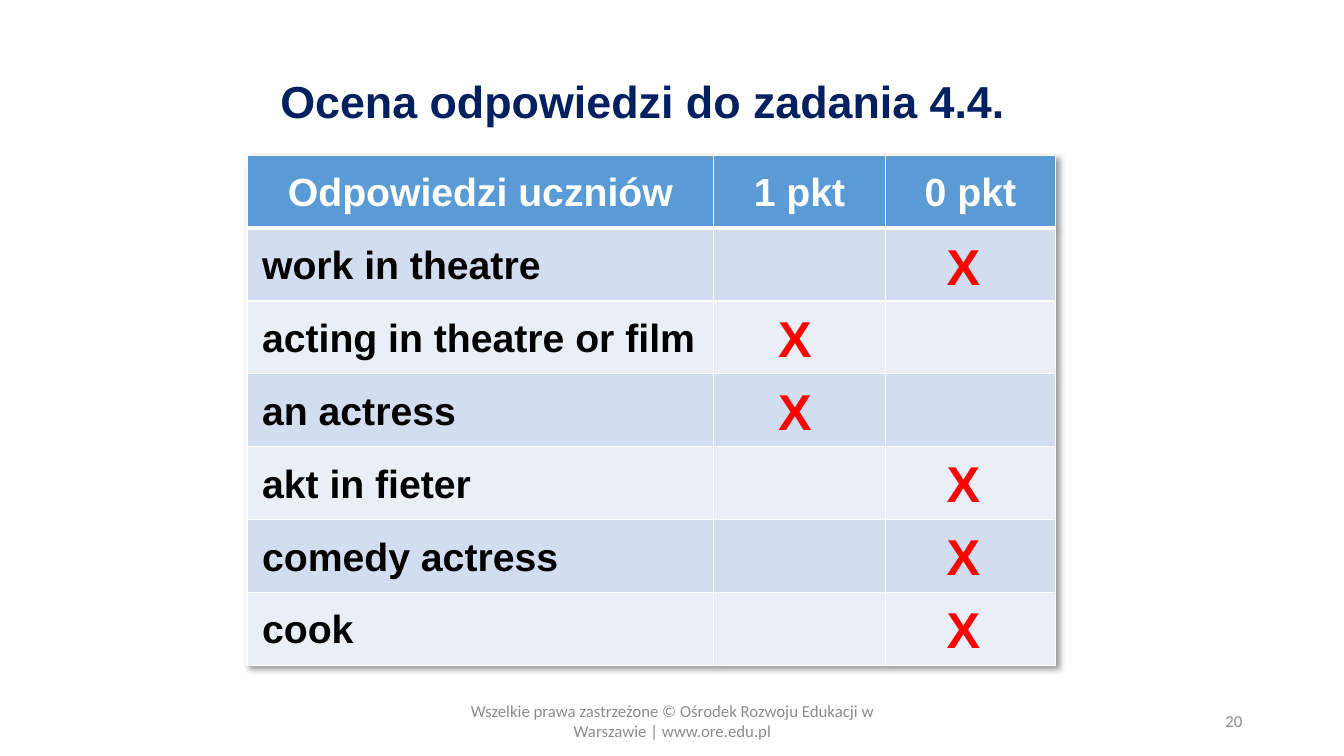
from lxml import etree
from pptx import Presentation
from pptx.dml.color import RGBColor
from pptx.enum.text import MSO_ANCHOR as Anchor, MSO_AUTO_SIZE as Fit, PP_ALIGN as Align
from pptx.oxml import parse_xml
from pptx.oxml.ns import nsdecls
from pptx.util import Inches, Pt


def style(par, size, color, bold=True, face="Arial", align=Align.LEFT):
    par.alignment = align
    for run in par.runs:
        font = run.font
        font.size, font.bold, font.name = Pt(size), bold, face
        font.color.rgb = RGBColor.from_string(color)


def add_box(left, top, width, height, text):
    """Add a wrapping text box and return its text frame."""
    box = slide.shapes.add_textbox(*map(Inches, (left, top, width, height)))
    frame = box.text_frame
    frame.word_wrap = True
    frame.text = text
    return frame


prs = Presentation()
prs.slide_width, prs.slide_height = Inches(13.33), Inches(7.5)
slide = prs.slides.add_slide(prs.slide_layouts[5])

# Title
title = slide.shapes.title
title.left, title.top, title.width, title.height = map(Inches, (2.68, 0.31, 7.57, 1.45))
frame = title.text_frame
frame.text = "Ocena odpowiedzi do zadania 4.4."
frame.vertical_anchor = Anchor.MIDDLE
frame.auto_size = Fit.NONE
frame.paragraphs[0].line_spacing = 0.9
style(frame.paragraphs[0], 32, "002060")

# Footer and page number
for left, width, text, align in (
    (4.42, 4.5, "Wszelkie prawa zastrzeżone © Ośrodek Rozwoju Edukacji w Warszawie | www.ore.edu.pl",
     Align.CENTER),
    (9.42, 3, "20", Align.RIGHT),
):
    frame = add_box(left, 6.95, width, 0.4, text)
    frame.vertical_anchor = Anchor.MIDDLE
    style(frame.paragraphs[0], 12, "8C8C8C", False, "Calibri", align)

# Table of answers; each answer goes with the points it earns
heads = ("Odpowiedzi uczniów", "1 pkt", "0 pkt")
answers = (
    ("work in theatre", 0),
    ("acting in theatre or film", 1),
    ("an actress", 1),
    ("akt in fieter", 0),
    ("comedy actress", 0),
    ("cook", 0),
)
rows = [heads] + [(text, "", "") for text, _ in answers]
widths = (4.63, 1.7, 1.69)
grid = slide.shapes.add_table(len(rows), len(widths), *map(Inches, (2.45, 1.54, 8.02, 5.06))).table
for col, width in zip(grid.columns, widths):
    col.width = Inches(width)

shade = parse_xml(
    f'<a:effectLst {nsdecls("a")}><a:outerShdw blurRad="50800" dist="38100" dir="2700000" algn="tl"'
    ' rotWithShape="0"><a:srgbClr val="000000"><a:alpha val="40000"/></a:srgbClr>'
    '</a:outerShdw></a:effectLst>')
grid._tbl.tblPr.insert(0, shade)

for r, row in enumerate(rows):
    for c, text in enumerate(row):
        cell = grid.cell(r, c)
        props = cell._tc.get_or_add_tcPr()
        for side in "LRTB":
            thick = (r, side) in ((0, "B"), (1, "T"))
            props.append(parse_xml(
                f'<a:ln{side} {nsdecls("a")} w="{Pt(3 if thick else 1)}"><a:solidFill>'
                f'<a:srgbClr val="FFFFFF"/></a:solidFill></a:ln{side}>'))
        cell.fill.solid()
        fill = "5B9BD5" if r == 0 else ("EAEFF7", "D2DEEF")[r % 2]
        cell.fill.fore_color.rgb = RGBColor.from_string(fill)
        cell.vertical_anchor = Anchor.MIDDLE
        cell.margin_left = cell.margin_right = Inches(0.07)
        cell.margin_top = cell.margin_bottom = 0
        cell.text = text
        par = cell.text_frame.paragraphs[0]
        par.line_spacing = 1.07
        if r == 0:
            style(par, 28, "FFFFFF", align=Align.CENTER)
        else:
            style(par, 28, "000000", align=Align.JUSTIFY)
            par._p.get_or_add_pPr().set("marL", str(Inches(0.08)))

# Red marks in the column of the points earned
for i, (_, points) in enumerate(answers):
    frame = add_box(7.62 if points else 9.29, 2.28 + 0.72 * i, 0.5, 0.71, "X")
    frame.auto_size = Fit.SHAPE_TO_FIT_TEXT
    style(frame.paragraphs[0], 36, "FF0000")

prs.save("out.pptx")
